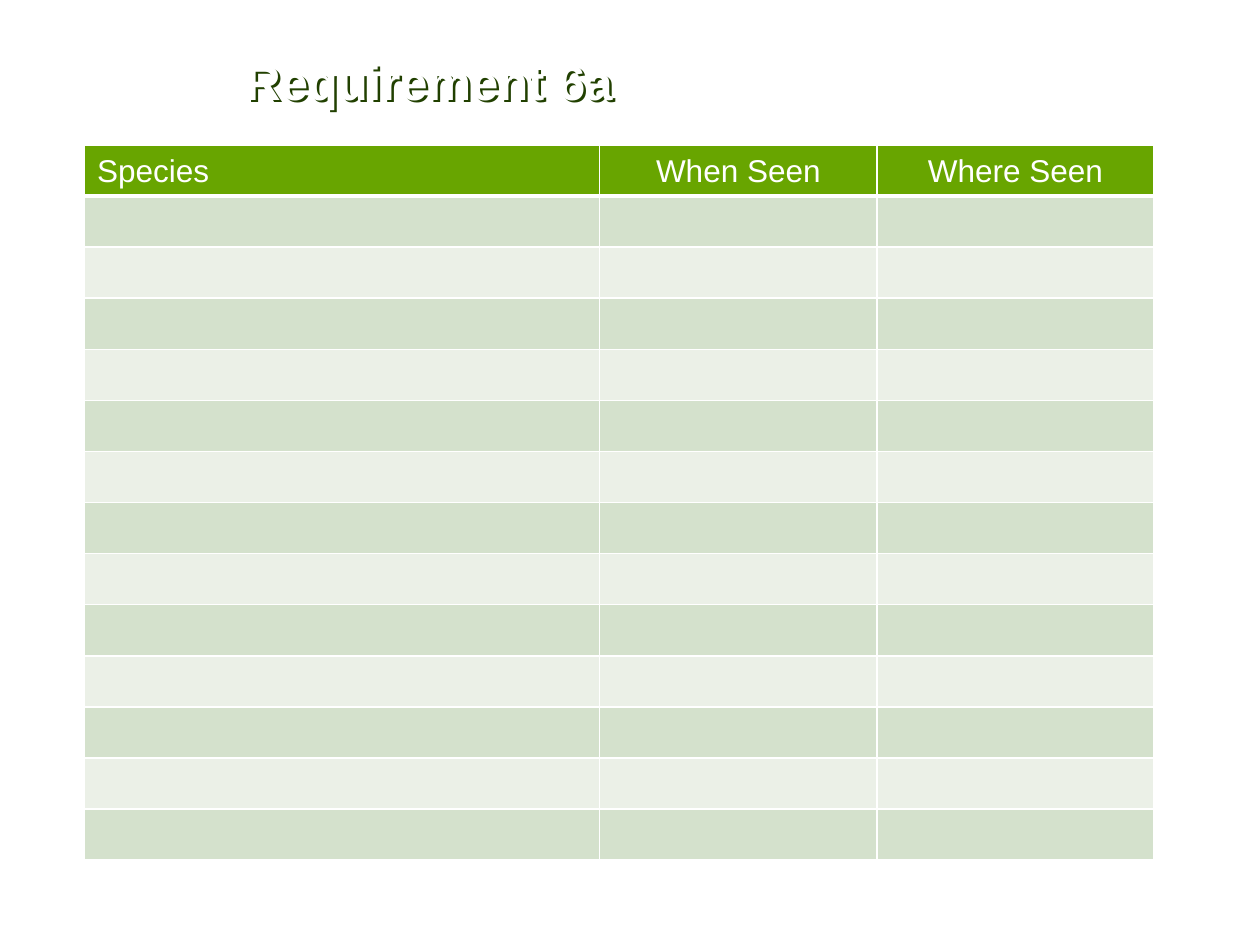
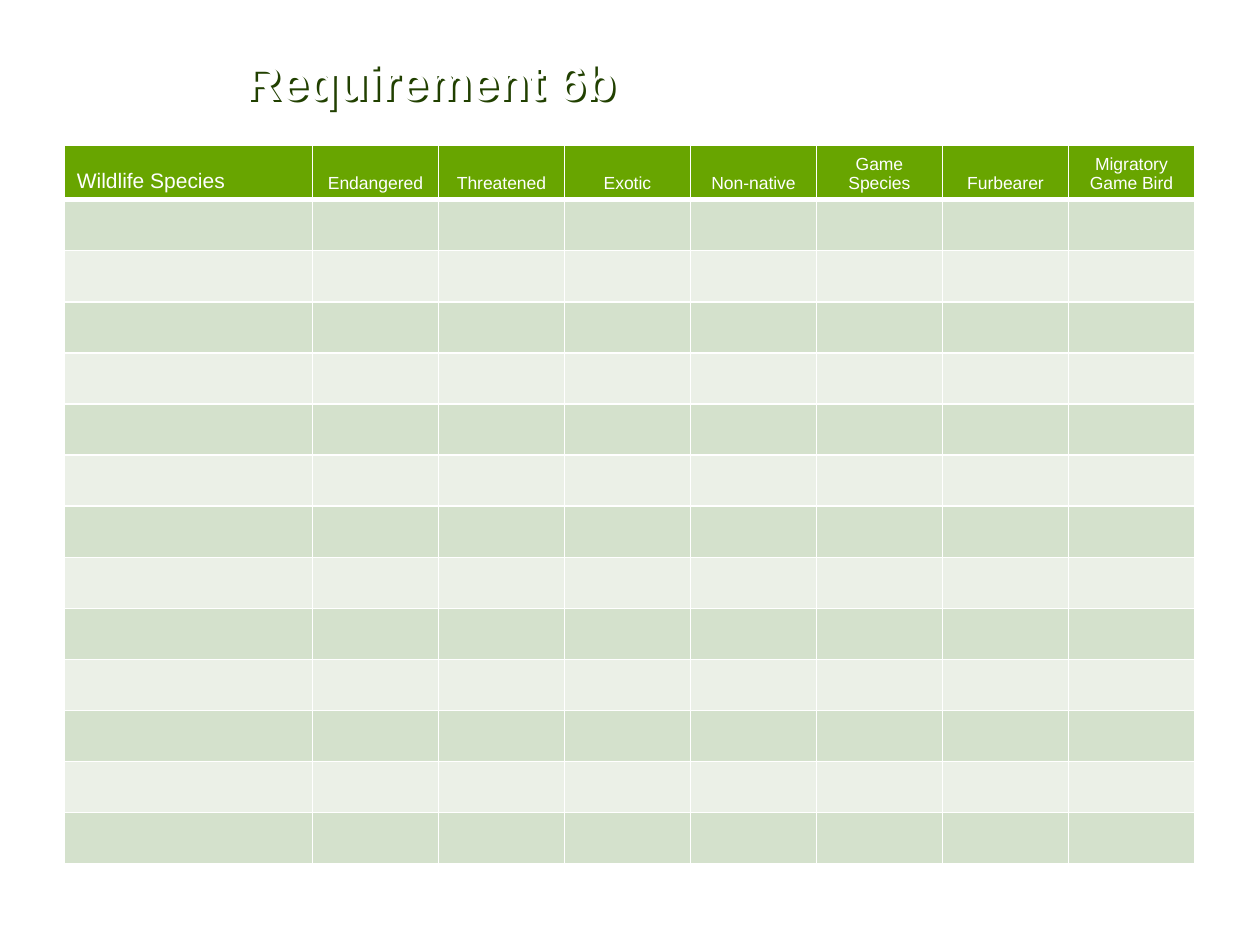
from dataclasses import dataclass

from lxml import etree
from pptx import Presentation
from pptx.dml.color import RGBColor
from pptx.enum.text import MSO_ANCHOR, PP_ALIGN
from pptx.oxml.ns import qn
from pptx.util import Inches, Pt

LEFT, CENTER = PP_ALIGN.LEFT, PP_ALIGN.CENTER
MIDDLE, BOTTOM = MSO_ANCHOR.MIDDLE, MSO_ANCHOR.BOTTOM


@dataclass(frozen=True)
class Theme:
    font: str = "Arial"
    white: str = "FFFFFF"
    shadow: str = "214000"
    header: str = "68A500"
    bands: tuple[str, str] = ("D4E1CC", "EBF0E7")
    title_size: int = 28
    rule: int = 1
    header_rule: int = 3


@dataclass(frozen=True)
class Checklist:
    """A titled, blank table to be filled in by hand."""
    title: str
    left: float
    headers: tuple[str, ...]
    first_width: float
    other_width: float
    first_size: int
    other_size: int


THEME = Theme()
TABLE_TOP, TABLE_HEIGHT, ROWS = 1.15, 5.68, 14

CHECKLISTS = (
    Checklist("Requirement 6a", 0.67, ("Species", "When Seen", "Where Seen"),
              4.09, 2.2, 18, 18),
    Checklist("Requirement 6b", 0.51,
              ("Wildlife Species", "Endangered", "Threatened", "Exotic",
               "Non-native", "Game Species", "Furbearer", "Migratory Game Bird"),
              1.97, 1, 12, 10),
)


def style_text(p, size: int, bold: bool, align) -> None:
    p.alignment = align
    p.font.name = THEME.font
    p.font.size = Pt(size)
    p.font.bold = bold
    p.font.color.rgb = RGBColor.from_string(THEME.white)


def add_color(parent, color: str) -> None:
    etree.SubElement(parent, qn("a:srgbClr"), val=color)


def add_title(slide, text: str) -> None:
    sp = slide.shapes.add_textbox(Inches(1.85), Inches(0.36),
                                  Inches(7.4), Inches(0.56))
    tf = sp.text_frame
    tf.word_wrap = True
    tf.vertical_anchor = MIDDLE
    tf.text = text
    style_text(tf.paragraphs[0], THEME.title_size, True, LEFT)

    # Hard shadow that makes the white letters readable
    effects = etree.SubElement(sp._element.spPr, qn("a:effectLst"))
    shadow = etree.SubElement(effects, qn("a:outerShdw"), dist=str(Pt(2)),
                              dir="2700000", algn="ctr", rotWithShape="0")
    add_color(shadow, THEME.shadow)


def paint_cell(cell, color: str, top: int, bottom: int) -> None:
    """Rule all four sides of a cell, then fill it."""
    tc_pr = cell._tc.get_or_add_tcPr()
    for side, width in (("L", THEME.rule), ("R", THEME.rule),
                        ("T", top), ("B", bottom)):
        ln = etree.SubElement(tc_pr, qn(f"a:ln{side}"), w=str(Pt(width)))
        add_color(etree.SubElement(ln, qn("a:solidFill")), THEME.white)
    cell.fill.solid()
    cell.fill.fore_color.rgb = RGBColor.from_string(color)


def add_table(slide, item: Checklist) -> None:
    count = len(item.headers)
    widths = [item.first_width] + [item.other_width] * (count - 1)
    table = slide.shapes.add_table(
        ROWS, count, Inches(item.left), Inches(TABLE_TOP),
        Inches(sum(widths)), Inches(TABLE_HEIGHT)).table

    # Header row
    for col, (text, width) in enumerate(zip(item.headers, widths)):
        table.columns[col].width = Inches(width)
        cell = table.cell(0, col)
        cell.text = text
        cell.vertical_anchor = BOTTOM
        size, align = ((item.other_size, CENTER) if col
                       else (item.first_size, LEFT))
        style_text(cell.text_frame.paragraphs[0], size, False, align)
        paint_cell(cell, THEME.header, THEME.rule, THEME.header_rule)

    # Banded rows to fill in
    for row in range(1, ROWS):
        top = THEME.header_rule if row == 1 else THEME.rule
        for col in range(count):
            paint_cell(table.cell(row, col), THEME.bands[(row - 1) % 2],
                       top, THEME.rule)


def main() -> None:
    prs = Presentation()
    prs.slide_width, prs.slide_height = Inches(10), Inches(7.5)
    blank = prs.slide_layouts[6]
    for item in CHECKLISTS:
        slide = prs.slides.add_slide(blank)
        add_title(slide, item.title)
        add_table(slide, item)
    prs.save("out.pptx")


if __name__ == "__main__":
    main()
